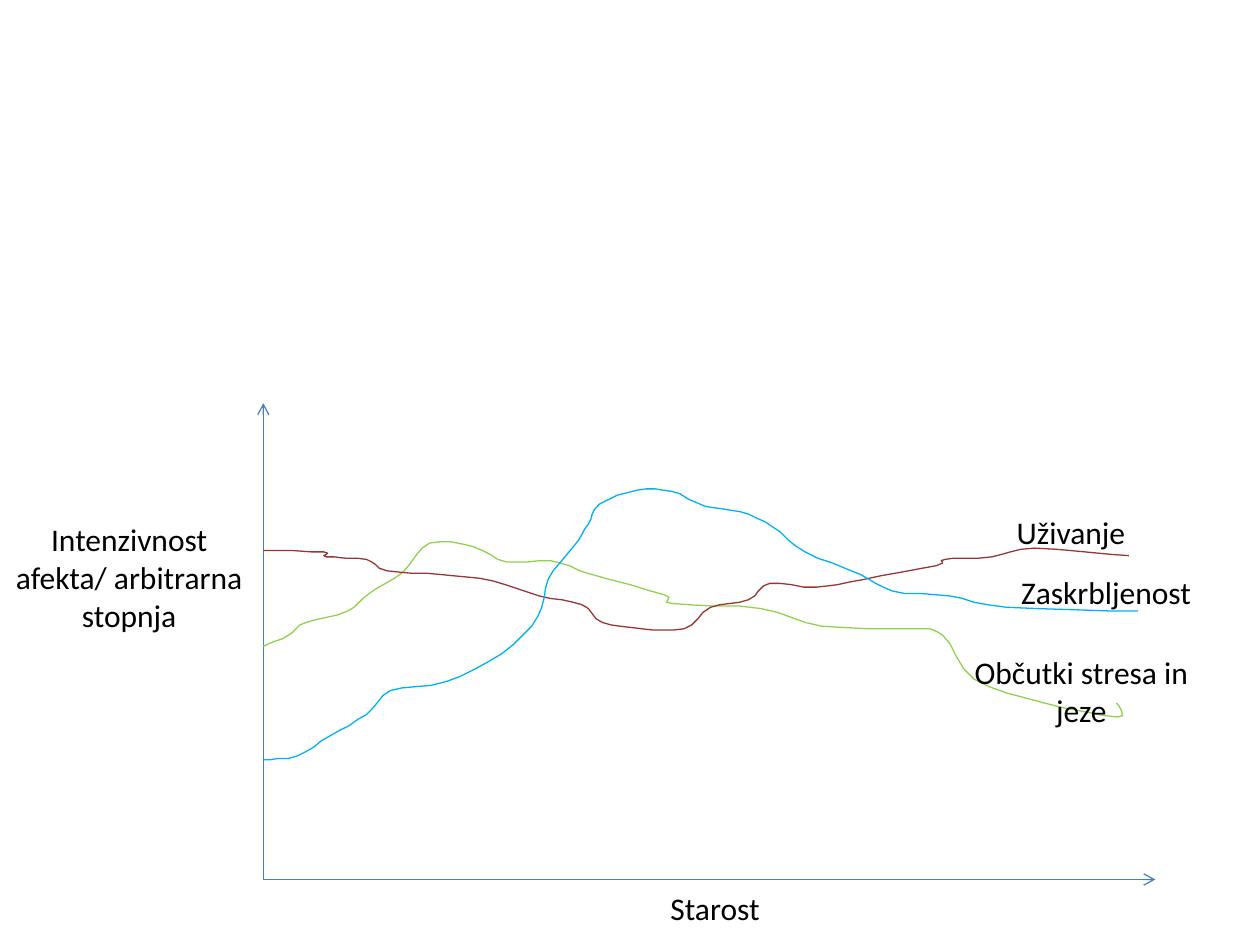
import pptx
import pptx.dml.color
import pptx.enum.shapes
import pptx.enum.text
import pptx.oxml
import pptx.oxml.ns
import pptx.util

Cm = pptx.util.Cm
RGB = pptx.dml.color.RGBColor

BLACK = RGB(0x00, 0x00, 0x00)
AXIS_BLUE = RGB(0x4B, 0x7E, 0xBC)
GREEN = RGB(0x92, 0xD0, 0x50)
RED = RGB(0x95, 0x37, 0x35)
CYAN = RGB(0x00, 0xB0, 0xF0)

UNIT = Cm(2.54) / 100  # curve coordinates are hundredths of an inch
STEPS = 4  # straight pieces between two neighbouring curve points
ORIGIN = (209, 698)
AXIS_ENDS = [(917, 698), (209, 320)]

# text, left, top, width, height in cm
AXIS_LABELS = [
    ("Starost", 10.11, 17.93, 8.61, 0.74),
    ("Intenzivnost afekta/ arbitrarna stopnja", 0, 11.33, 5.21, 0.61),
]

# Each curve is followed by its label
CURVES = [
    (GREEN, [
        (209, 513), (229, 504), (243, 494), (276, 485), (293, 471), (320, 454),
        (341, 431), (376, 434), (402, 446), (437, 445), (470, 456), (527, 472),
        (534, 479), (604, 483), (652, 497), (722, 499), (748, 504), (773, 539),
        (829, 558), (887, 569), (886, 558)],
     ("Občutki stresa in jeze", 19.3, 13.13, 5, 1.6)),
    (RED, [
        (209, 437), (257, 438), (259, 442), (291, 444), (307, 453), (350, 456),
        (391, 461), (428, 473), (462, 480), (478, 494), (509, 499), (543, 499),
        (564, 482), (594, 476), (611, 463), (648, 466), (685, 460), (743, 449),
        (750, 444), (787, 442), (821, 435), (896, 441)],
     ("Uživanje", 18.49, 9.93, 6.2, 1.6)),
    (CYAN, [
        (209, 603), (236, 600), (262, 584), (291, 567), (310, 548), (354, 541),
        (398, 519), (427, 489), (435, 460), (455, 434), (467, 416), (476, 400),
        (506, 389), (533, 390), (560, 402), (587, 406), (613, 418), (639, 438),
        (683, 456), (708, 469), (754, 473), (799, 482), (903, 485)],
     ("Zaskrbljenost", 19.2, 11.13, 6.2, 1.6)),
]


def add_label(slide, text, left, top, width, height, *, size=18, font="Calibri", color=BLACK):
    frame = slide.shapes.add_textbox(Cm(left), Cm(top), Cm(width), Cm(height)).text_frame
    frame.word_wrap = True
    frame.vertical_anchor = pptx.enum.text.MSO_ANCHOR.MIDDLE
    paragraph = frame.paragraphs[0]
    paragraph.alignment = pptx.enum.text.PP_ALIGN.CENTER
    run = paragraph.add_run()
    run.text = text
    run.font.size = pptx.util.Pt(size)
    run.font.name = font
    run.font.color.rgb = color


def style_line(line, color):
    line.color.rgb = color
    line.width = pptx.util.Pt(0.75)


def add_axis(slide, end):
    ends = [round(value * UNIT) for value in ORIGIN + end]
    axis = slide.shapes.add_connector(pptx.enum.shapes.MSO_CONNECTOR.STRAIGHT, *ends)
    style_line(axis.line, AXIS_BLUE)
    namespace = pptx.oxml.ns.nsdecls("a")
    outline = axis.line.fill._xPr
    outline.append(pptx.oxml.parse_xml(f'<a:tailEnd {namespace} type="arrow"/>'))
    axis._element.spPr.append(pptx.oxml.parse_xml(f"<a:effectLst {namespace}/>"))


def smoothed(points):
    """Pass a rounded path through all points, with tangents set by their neighbours."""
    padded = [points[0], *points, points[-1]]
    path = [points[0]]
    for before, start, end, after in zip(padded, padded[1:], padded[2:], padded[3:]):
        for step in range(1, STEPS + 1):
            t = step / STEPS
            path.append(tuple(
                round(b + t * (c - a) / 2
                      + t**2 * (2 * a - 5 * b + 4 * c - d) / 2
                      + t**3 * (3 * b - a - 3 * c + d) / 2)
                for a, b, c, d in zip(before, start, end, after)))
    return path


def add_curve(slide, points, color):
    path = smoothed(points)
    builder = slide.shapes.build_freeform(*path[0], scale=UNIT)
    builder.add_line_segments(path[1:], close=False)
    curve = builder.convert_to_shape()
    curve.shadow.inherit = False
    curve.fill.background()
    style_line(curve.line, color)


def main():
    deck = pptx.Presentation()
    deck.slide_width, deck.slide_height = Cm(25.4), Cm(19.05)
    slide = deck.slides.add_slide(deck.slide_layouts[6])
    for end in AXIS_ENDS:
        add_axis(slide, end)
    for label in AXIS_LABELS:
        add_label(slide, *label)
    for color, points, label in CURVES:
        add_curve(slide, points, color)
        add_label(slide, *label)
    deck.save("out.pptx")


if __name__ == "__main__":
    main()
